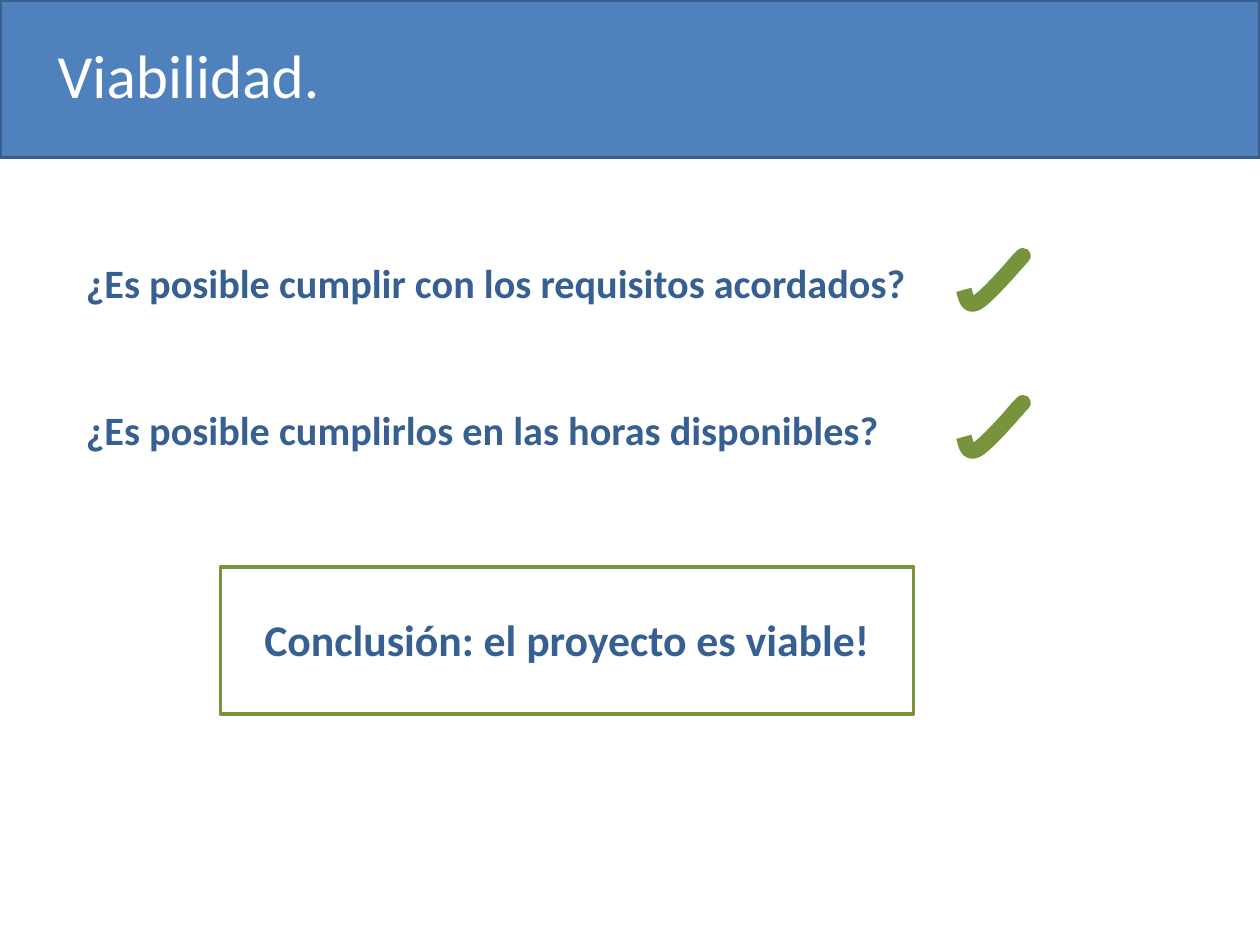
from pptx import Presentation
from pptx.dml.color import RGBColor
from pptx.enum.shapes import MSO_SHAPE
from pptx.util import Pt


def color(value):
    return RGBColor.from_string(value)


def add_text(text, left, top, width, height, size=23, fill="376092", bold=True, inset=7.2):
    box = page.shapes.add_textbox(Pt(left), Pt(top), Pt(width), Pt(height))
    box.text_frame.word_wrap = True
    box.text_frame.margin_left = Pt(inset)
    span = box.text_frame.paragraphs[0].add_run()
    span.text = text
    span.font.name = "Calibri"
    span.font.size = Pt(size)
    span.font.bold = bold
    span.font.color.rgb = color(fill)


deck = Presentation()
deck.slide_width, deck.slide_height = Pt(720), Pt(540)
page = deck.slides.add_slide(deck.slide_layouts[6])

frames = [
    (126, 324, 396, 84, None, "77933C"),
    (0, 0, 720, 90, "4F81BD", "3A5F8C"),
]
for left, top, width, height, fill, line in frames:
    frame = page.shapes.add_shape(MSO_SHAPE.RECTANGLE, Pt(left), Pt(top), Pt(width), Pt(height))
    frame.shadow.inherit = False
    if fill:
        frame.fill.solid()
        frame.fill.fore_color.rgb = color(fill)
    else:
        frame.fill.background()
    frame.line.color.rgb = color(line)
    frame.line.width = Pt(2)

add_text("Viabilidad.", 18, 18, 552, 50, size=35, fill="FFFFFF", bold=False, inset=15)

check_curves = [
    [(0, 21.6), (1.4, 26.6), (2.2, 31.7), (7.6, 28.8)],
    [(7.6, 28.8), (13, 25.9), (28.6, 7.9), (32.4, 3.6)],
    [(32.4, 3.6), (36, 0), (31.7, 4.3), (31, 5)],
    [(31, 5), (30.2, 6.2), (28.8, 7.2), (28, 8.6)],
]
steps = 12
check_points = [check_curves[0][0]]
for curve in check_curves:
    for step in range(1, steps + 1):
        t = step / steps
        weights = [(1 - t) ** 3, 3 * t * (1 - t) ** 2, 3 * t ** 2 * (1 - t), t ** 3]
        check_points.append(tuple(
            sum(weight * point[axis] for weight, point in zip(weights, curve)) for axis in (0, 1)
        ))

questions = [
    "¿Es posible cumplir con los requisitos acordados?",
    "¿Es posible cumplirlos en las horas disponibles?",
]
for row, question in enumerate(questions):
    top = 144 + 84 * row
    add_text(question, 42, top, 509, 35)
    points = [(Pt(550.8 + x), Pt(top + y)) for x, y in check_points]
    builder = page.shapes.build_freeform(*points[0])
    builder.add_line_segments(points[1:], close=False)
    check = builder.convert_to_shape()
    check.shadow.inherit = False
    check.fill.background()
    check.line.color.rgb = color("77933C")
    check.line.width = Pt(9)

add_text("Conclusión: el proyecto es viable!", 144, 346.5, 509, 37.5, size=25)

deck.save("out.pptx")
